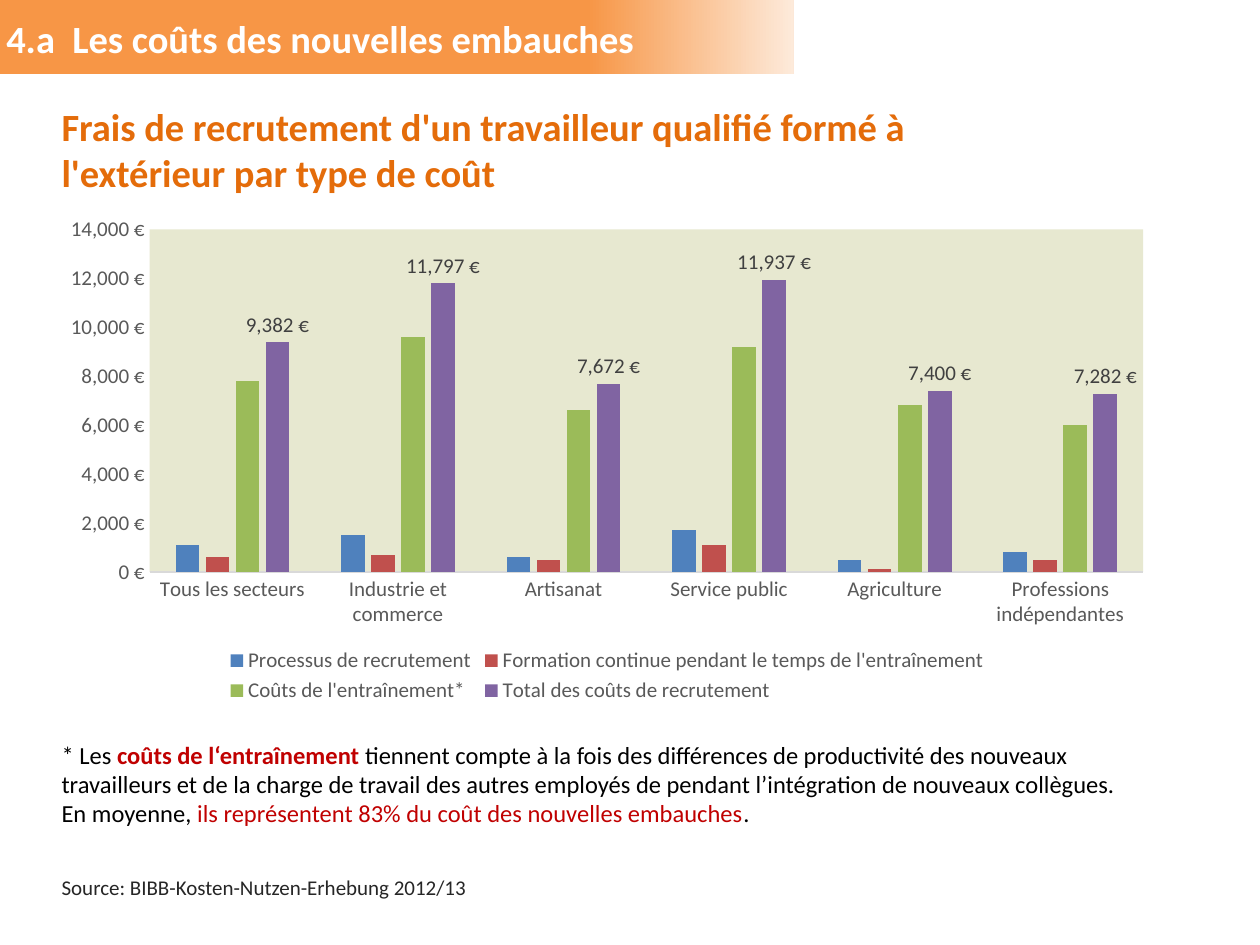
from lxml import etree
from pptx import Presentation
from pptx.chart.data import CategoryChartData
from pptx.dml.color import RGBColor
from pptx.enum.chart import XL_CHART_TYPE, XL_LABEL_POSITION, XL_LEGEND_POSITION, XL_TICK_MARK
from pptx.enum.shapes import MSO_SHAPE
from pptx.enum.text import MSO_ANCHOR, PP_ALIGN
from pptx.oxml.ns import qn
from pptx.util import Inches, Pt

COLUMNS = XL_CHART_TYPE.COLUMN_CLUSTERED
OUTSIDE_END = XL_LABEL_POSITION.OUTSIDE_END
BOTTOM = XL_LEGEND_POSITION.BOTTOM
NO_TICK = XL_TICK_MARK.NONE
RECTANGLE = MSO_SHAPE.RECTANGLE
TOP, MIDDLE = MSO_ANCHOR.TOP, MSO_ANCHOR.MIDDLE
LEFT = PP_ALIGN.LEFT

FONT = "Calibri"
EURO_FORMAT = '#,##0\\ "€"'
WHITE = RGBColor(0xFF, 0xFF, 0xFF)
BLACK = RGBColor(0, 0, 0)
ORANGE = RGBColor(0xF7, 0x96, 0x46)
PALE_ORANGE = RGBColor(0xFD, 0xEA, 0xDA)
DARK_ORANGE = RGBColor(0xE4, 0x6C, 0x0A)
RED = RGBColor(0xC0, 0x00, 0x00)
SOURCE_GREY = RGBColor(0x26, 0x26, 0x26)
LABEL_GREY = RGBColor(0x40, 0x40, 0x40)
AXIS_GREY = RGBColor(0x59, 0x59, 0x59)
LINE_GREY = RGBColor(0xD9, 0xD9, 0xD9)


def style_font(font, size, color, bold=False):
    font.name = FONT
    font.size = Pt(size)
    font.bold = bold
    font.color.rgb = color


def write_paragraphs(shape, size, paragraphs, anchor=TOP, wrap=True):
    frame = shape.text_frame
    frame.word_wrap = wrap
    frame.vertical_anchor = anchor
    for index, runs in enumerate(paragraphs):
        paragraph = frame.add_paragraph() if index else frame.paragraphs[0]
        paragraph.alignment = LEFT
        for text, color, bold in runs:
            run = paragraph.add_run()
            run.text = text
            style_font(run.font, size, color, bold)


presentation = Presentation()
presentation.slide_width = Inches(10)
presentation.slide_height = Inches(7.5)
slide = presentation.slides.add_slide(presentation.slide_layouts[5])
shapes = slide.shapes

# Title band, behind the title
band = shapes.add_shape(RECTANGLE, 0, 0, Inches(6.3), Inches(0.59))
band.shadow.inherit = False
band.line.fill.background()
band.fill.gradient()
band.fill.gradient_angle = 0
for stop, position, color in zip(band.fill.gradient_stops, (0.74, 1), (ORANGE, PALE_ORANGE)):
    stop.position = position
    stop.color.rgb = color
shapes.title.element.addprevious(band.element)

# Title
title = shapes.title
title.left, title.top = Inches(-0.05), Inches(0.07)
title.width, title.height = Inches(6.63), Inches(0.47)
write_paragraphs(title, 22, [[("4.a  Les coûts des nouvelles embauches", WHITE, True)]])

# Source
source = shapes.add_shape(RECTANGLE, Inches(0.39), Inches(6.81), Inches(3.51), Inches(0.47))
source.shadow.inherit = False
source.fill.solid()
source.fill.fore_color.rgb = WHITE
source.line.fill.background()
write_paragraphs(source, 12, [[("Source: BIBB-Kosten-Nutzen-Erhebung 2012/13", SOURCE_GREY, False)]],
                 MIDDLE, False)

# Chart heading
heading = shapes.add_textbox(Inches(0.39), Inches(0.77), Inches(7.76), Inches(0.84))
write_paragraphs(heading, 22, [[
    ("Frais de recrutement d'un travailleur qualifié formé à l'extérieur par type de coût",
     DARK_ORANGE, True)]])

# Recruitment cost chart
series_data = [
    ("Processus de recrutement", (1100, 1500, 600, 1700, 500, 800), RGBColor(0x4F, 0x81, 0xBD)),
    ("Formation continue pendant le temps de l'entraînement",
     (600, 700, 500, 1100, 100, 500), RGBColor(0xC0, 0x50, 0x4D)),
    ("Coûts de l'entraînement*", (7800, 9600, 6600, 9200, 6800, 6000), RGBColor(0x9B, 0xBB, 0x59)),
    ("Total des coûts de recrutement",
     (9382, 11797, 7672, 11937, 7400, 7282), RGBColor(0x80, 0x64, 0xA2)),
]
chart_data = CategoryChartData(number_format=EURO_FORMAT)
chart_data.categories = ["Tous les secteurs", "Industrie et commerce", "Artisanat",
                         "Service public", "Agriculture", "Professions indépendantes"]
for name, values, _ in series_data:
    chart_data.add_series(name, values)
chart = shapes.add_chart(COLUMNS, Inches(0.39), Inches(1.62), Inches(8.86), Inches(4),
                         chart_data).chart
chart.has_title = False
style_font(chart.font, 12, AXIS_GREY)

plot = chart.plots[0]
plot.gap_width = 219
plot.overlap = -27
plot.vary_by_categories = False
for series, (_, _, color) in zip(plot.series, series_data):
    series.format.fill.solid()
    series.format.fill.fore_color.rgb = color
    series.invert_if_negative = False

labels = plot.series[-1].data_labels
labels.show_value = True
labels.number_format = EURO_FORMAT
labels.number_format_is_linked = False
labels.position = OUTSIDE_END
style_font(labels.font, 12, LABEL_GREY)

# Axes and legend
category_axis, value_axis = chart.category_axis, chart.value_axis
for axis in (category_axis, value_axis):
    axis.major_tick_mark = axis.minor_tick_mark = NO_TICK
    axis.has_major_gridlines = False
    style_font(axis.tick_labels.font, 12, AXIS_GREY)
category_axis.format.line.color.rgb = LINE_GREY
category_axis.format.line.width = Pt(0.75)
value_axis.format.line.fill.background()
value_axis.minimum_scale, value_axis.maximum_scale = 0, 14000
value_axis.major_unit = 2000
value_axis.tick_labels.number_format = EURO_FORMAT
value_axis.tick_labels.number_format_is_linked = False
chart.has_legend = True
chart.legend.position = BOTTOM
chart.legend.include_in_layout = False
style_font(chart.legend.font, 12, AXIS_GREY)

# Plot area position and background
plot_area = chart.element.find(".//" + qn("c:plotArea"))
layout = plot_area.find(qn("c:layout"))
if layout is None:
    layout = etree.Element(qn("c:layout"))
    plot_area.insert(0, layout)
manual_layout = etree.SubElement(layout, qn("c:manualLayout"))
for tag, value in (("layoutTarget", "inner"), ("xMode", "edge"), ("yMode", "edge"),
                   ("x", "0.09"), ("y", "0.05"), ("w", "0.89"), ("h", "0.68")):
    etree.SubElement(manual_layout, qn("c:" + tag), val=value)
plot_properties = etree.SubElement(plot_area, qn("c:spPr"))
plot_fill = etree.SubElement(plot_properties, qn("a:solidFill"))
etree.SubElement(plot_fill, qn("a:srgbClr"), val="E7E8D0")

# Footnote
footnote = shapes.add_textbox(Inches(0.39), Inches(5.82), Inches(9.1), Inches(0.81))
write_paragraphs(footnote, 14, [
    [("* Les ", BLACK, False),
     ("coûts de l‘entraînement ", RED, True),
     ("tiennent compte à la fois des différences de productivité des nouveaux travailleurs et de la "
      "charge de travail des autres employés de pendant l’intégration de nouveaux collègues.",
      BLACK, False)],
    [("En moyenne, ", BLACK, False),
     ("ils représentent 83% du coût des nouvelles embauches", RED, False),
     (".", BLACK, False)],
])

presentation.save("out.pptx")
